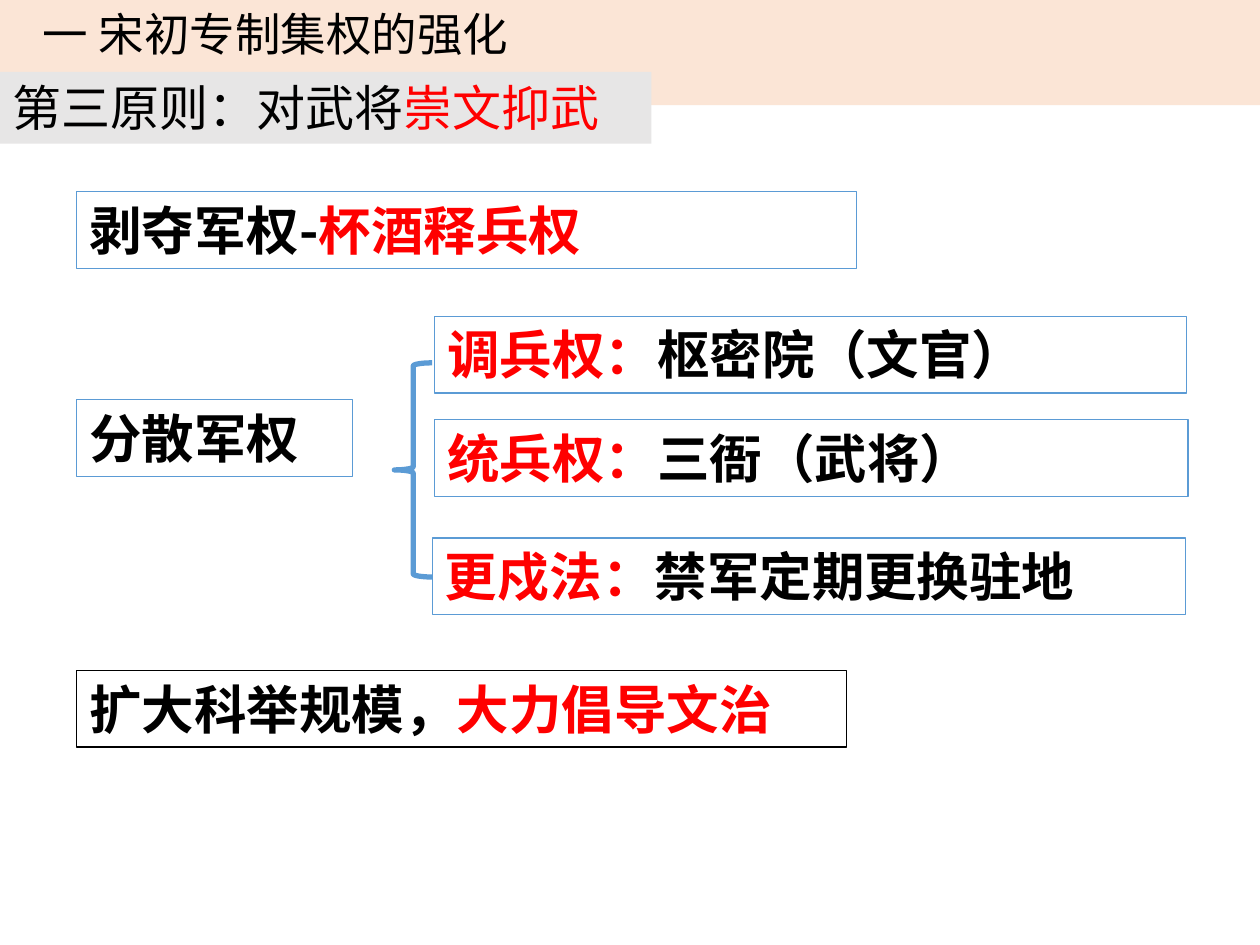
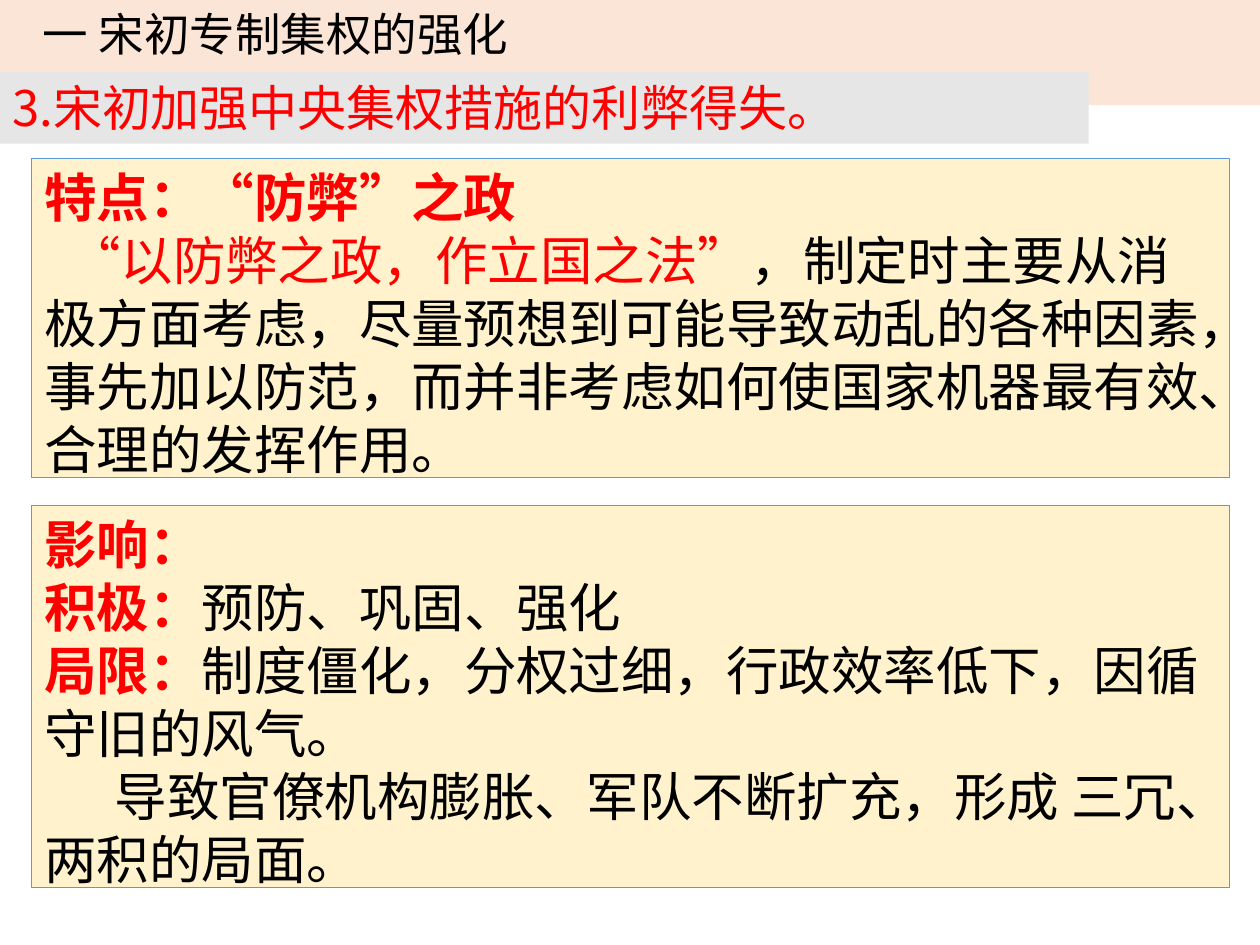
from dataclasses import dataclass
from typing import Optional

from lxml.etree import SubElement
from pptx import Presentation
from pptx.dml.color import RGBColor
from pptx.enum.shapes import MSO_SHAPE
from pptx.enum.text import MSO_ANCHOR, MSO_AUTO_SIZE, PP_ALIGN
from pptx.oxml.ns import qn
from pptx.util import Inches, Pt

FONT = "Noto Sans CJK SC"
BLACK = RGBColor(0x00, 0x00, 0x00)
RED = RGBColor(0xFF, 0x00, 0x00)
BLUE = RGBColor(0x5B, 0x9B, 0xD5)
PEACH = RGBColor(0xFB, 0xE5, 0xD6)
GRAY = RGBColor(0xE7, 0xE6, 0xE6)
CREAM = RGBColor(0xFF, 0xF2, 0xCC)

CHAPTER = "一 宋初专制集权的强化"
TITLE_ONLY, TWO_CONTENT = 5, 3
BOX_HEIGHT = 0.61


@dataclass
class Span:
    text: str
    color: RGBColor = BLACK
    bold: bool = False


@dataclass
class Line:
    spans: list[Span]
    indent: float = 0


@dataclass
class Block:
    left: float
    top: float
    width: float
    height: float
    lines: list[Line]
    size: int = 30
    fill: Optional[RGBColor] = None
    outline: Optional[RGBColor] = None
    margin: float = 0.1


def place(shape, block: Block) -> None:
    shape.left, shape.top = Inches(block.left), Inches(block.top)
    shape.width, shape.height = Inches(block.width), Inches(block.height)


def write_line(paragraph, line: Line, size: int) -> None:
    paragraph.alignment = PP_ALIGN.LEFT
    paragraph.space_before = Pt(0)
    properties = paragraph._p.get_or_add_pPr()
    properties.set("marL", "0")
    properties.set("indent", str(Inches(line.indent)))
    SubElement(properties, qn("a:buNone"))
    for span in line.spans:
        run = paragraph.add_run()
        run.text = span.text
        run.font.name = FONT
        run.font.size = Pt(size)
        run.font.bold = span.bold
        run.font.color.rgb = span.color
        SubElement(run._r.get_or_add_rPr(), qn("a:ea")).set("typeface", FONT)


def fill_block(shape, block: Block) -> None:
    place(shape, block)
    if block.fill is not None:
        shape.fill.solid()
        shape.fill.fore_color.rgb = block.fill
    if block.outline is not None:
        shape.line.color.rgb = block.outline
        shape.line.width = Pt(0.75)
    text_frame = shape.text_frame
    text_frame.word_wrap = True
    text_frame.auto_size = MSO_AUTO_SIZE.SHAPE_TO_FIT_TEXT
    text_frame.vertical_anchor = MSO_ANCHOR.TOP
    text_frame.margin_left = Inches(block.margin)
    for index, line in enumerate(block.lines):
        paragraph = text_frame.add_paragraph() if index else text_frame.paragraphs[0]
        write_line(paragraph, line, block.size)


def add_block(slide, block: Block) -> None:
    fill_block(slide.shapes.add_textbox(0, 0, 0, 0), block)


def add_slide(presentation, layout: int, section: list[Span], section_width: float):
    slide = presentation.slides.add_slide(presentation.slide_layouts[layout])
    fill_block(slide.shapes.title, Block(
        0, 0, 10, 0.54, [Line([Span(CHAPTER)])], 26, PEACH, margin=0.34))
    add_block(slide, Block(0, 0.57, section_width, 0.57, [Line(section)], 28, GRAY))
    return slide


def heading_box(left: float, top: float, width: float, lead: Span, rest: str = "",
                outline: RGBColor = BLUE) -> Block:
    spans = [lead]
    if rest:
        spans.append(Span(rest, RED if lead.color == BLACK else BLACK, True))
    return Block(left, top, width, BOX_HEIGHT, [Line(spans)], outline=outline)


def add_brace(slide) -> None:
    brace = slide.shapes.add_shape(
        MSO_SHAPE.LEFT_BRACE, Inches(3.13), Inches(2.88), Inches(0.3), Inches(1.7))
    brace.shadow.inherit = False
    brace.fill.background()
    brace.line.color.rgb = BLUE
    brace.line.width = Pt(3)


def build_military_slide(presentation) -> None:
    slide = add_slide(presentation, TITLE_ONLY,
                      [Span("第三原则：对武将"), Span("崇文抑武", RED)], 5.17)
    boxes = [
        heading_box(0.61, 1.52, 6.19, Span("剥夺军权-", BLACK, True), "杯酒释兵权"),
        heading_box(0.61, 3.17, 2.19, Span("分散军权", BLACK, True)),
        heading_box(3.45, 2.51, 5.97, Span("调兵权：", RED, True), "枢密院（文官）"),
        heading_box(3.45, 3.33, 5.98, Span("统兵权：", RED, True), "三衙（武将）"),
        heading_box(3.43, 4.27, 5.98, Span("更戍法：", RED, True), "禁军定期更换驻地"),
        heading_box(0.61, 5.32, 6.11, Span("扩大科举规模，", BLACK, True),
                    "大力倡导文治", BLACK),
    ]
    for box in boxes:
        add_block(slide, box)
    add_brace(slide)


def build_evaluation_slide(presentation) -> None:
    slide = add_slide(presentation, TWO_CONTENT,
                      [Span("3.宋初加强中央集权措施的利弊得失。", RED)], 8.64)
    features = [
        Line([Span("特点：“防弊”之政", RED, True)]),
        Line([Span("“以防弊之政，作立国之法”", RED),
              Span("，制定时主要从消极方面考虑，尽量预想到可能导致动乱的各种因素，"
                   "事先加以防范，而并非考虑如何使国家机器最有效、合理的发挥作用。")], 0.19),
    ]
    effects = [
        Line([Span("影响：", RED, True)]),
        Line([Span("积极：", RED, True), Span("预防、巩固、强化")]),
        Line([Span("局限：", RED, True),
              Span("制度僵化，分权过细，行政效率低下，因循守旧的风气。")]),
        Line([Span("导致官僚机构膨胀、军队不断扩充，形成 三冗、两积的局面。")], 0.56),
    ]
    panels = [(1, 1.26, 2.63, features), (2, 4.01, 3.13, effects)]
    for placeholder_index, top, height, lines in panels:
        fill_block(slide.placeholders[placeholder_index],
                   Block(0.25, top, 9.51, height, lines, fill=CREAM, outline=BLUE))


def main() -> None:
    presentation = Presentation()
    presentation.slide_width, presentation.slide_height = Inches(10), Inches(7.5)
    build_military_slide(presentation)
    build_evaluation_slide(presentation)
    presentation.save("out.pptx")


if __name__ == "__main__":
    main()
